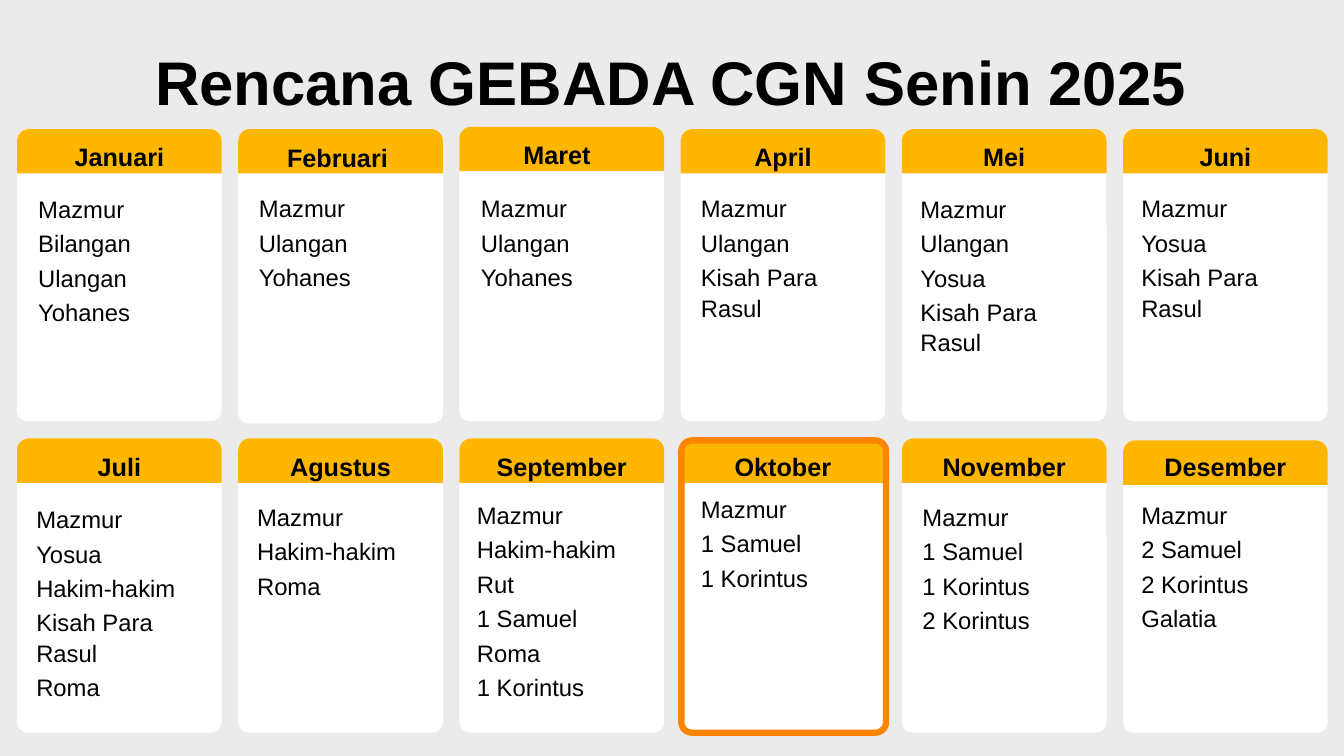
"""Build the 2025 monthly Bible reading plan slide."""
from dataclasses import dataclass

from pptx import Presentation
from pptx.dml.color import RGBColor
from pptx.enum.shapes import MSO_SHAPE
from pptx.enum.text import MSO_ANCHOR, PP_ALIGN
from pptx.shapes.autoshape import Shape
from pptx.slide import Slide
from pptx.util import Pt

ROUND = MSO_SHAPE.ROUNDED_RECTANGLE
ROUND_TOP = MSO_SHAPE.ROUND_2_SAME_RECTANGLE
TOP = MSO_ANCHOR.TOP
CENTER, LEFT = PP_ALIGN.CENTER, PP_ALIGN.LEFT

GRAY = RGBColor(0xEB, 0xEB, 0xEB)
WHITE = RGBColor(0xFF, 0xFF, 0xFF)
AMBER = RGBColor(0xFF, 0xB6, 0x00)
ORANGE = RGBColor(0xFB, 0x85, 0x00)
BLACK = RGBColor(0, 0, 0)

FONT = "Arial"
COLS = 6
GRID_LEFT, COL_PITCH = 12.2, 158
CARD_W, CARD_H, HEAD_H = 146.2, 208.8, 31.7
CARD_TOPS = (92.2, 314.6)
HEAD_TOPS = (92.2, 313.2)
LABEL_TOPS = (99.4, 321.1)
LINE_SPACING, LINE_H, GAP = 1.06, 20.7, 3


@dataclass(frozen=True)
class Month:
    """A month with its books and small position adjustments in points."""
    name: str
    books: tuple[str, ...]
    books_top: float = 137.5
    books_dx: float = 0
    card_dy: float = 0
    head_dy: float = 0
    label_dx: float = 0
    label_dy: float = 0


MONTHS = (
    Month("Januari", ("Mazmur", "Bilangan", "Ulangan", "Yohanes"), books_dx=0.7),
    Month("Februari", ("Mazmur", "Ulangan", "Yohanes"), books_dx=0.4,
          card_dy=1.4, label_dx=-2.2, label_dy=0.7),
    Month("Maret", ("Mazmur", "Ulangan", "Yohanes"), books_dx=0.9,
          head_dy=-1.6, label_dx=-3.4, label_dy=-1.4),
    Month("April", ("Mazmur", "Ulangan", "Kisah Para Rasul")),
    Month("Mei", ("Mazmur", "Ulangan", "Yosua", "Kisah Para Rasul"), books_dx=-1.2),
    Month("Juni", ("Mazmur", "Yosua", "Kisah Para Rasul"), books_dx=-1.4),
    Month("Juli", ("Mazmur", "Yosua", "Hakim-hakim", "Kisah Para Rasul", "Roma"),
          359.3, -0.7),
    Month("Agustus", ("Mazmur", "Hakim-hakim", "Roma"), 357.8, -1),
    Month("September", ("Mazmur", "Hakim-hakim", "Rut", "1 Samuel", "Roma",
                        "1 Korintus"), 356.4, -2),
    Month("Oktober", ("Mazmur", "1 Samuel", "1 Korintus"), 352.1),
    Month("November", ("Mazmur", "1 Samuel", "1 Korintus", "2 Korintus"), 357.8, 0.3),
    Month("Desember", ("Mazmur", "2 Samuel", "2 Korintus", "Galatia"), 356.4, -1.4,
          head_dy=1.4),
)
HIGHLIGHTED = 9


def cell(index: int) -> tuple[float, int]:
    """Return the left edge and the row of a month."""
    row, col = divmod(index, COLS)
    return GRID_LEFT + COL_PITCH * col, row


def add_panel(s: Slide, kind: MSO_SHAPE, x: float, y: float, h: float,
              radius: float) -> Shape:
    """Add a card-wide shape without shadow, fill or line."""
    sp = s.shapes.add_shape(kind, Pt(x), Pt(y), Pt(CARD_W), Pt(h))
    sp.adjustments[0] = radius
    sp.shadow.inherit = False
    sp.fill.background()
    sp.line.fill.background()
    return sp


def fill_panel(sp: Shape, color: RGBColor) -> None:
    """Fill a panel with one colour."""
    sp.fill.solid()
    sp.fill.fore_color.rgb = color


def write(sp: Shape, lines: tuple[str, ...], size: float, align: PP_ALIGN,
          bold: bool = False, indent: float = 0) -> None:
    """Write one paragraph per line in a shape."""
    tf = sp.text_frame
    tf.word_wrap = True
    tf.vertical_anchor = TOP
    tf.margin_left = Pt(indent)
    tf.margin_top = tf.margin_right = tf.margin_bottom = Pt(0)
    for i, line in enumerate(lines):
        p = tf.add_paragraph() if i else tf.paragraphs[0]
        p.alignment = align
        p.line_spacing = LINE_SPACING
        p.space_before = Pt(0)
        p.space_after = Pt(GAP)
        r = p.add_run()
        r.text = line
        r.font.name = FONT
        r.font.size = Pt(size)
        r.font.bold = bold
        r.font.color.rgb = BLACK


def add_month(s: Slide, index: int, month: Month) -> None:
    """Draw the card, header, name and books of a month."""
    x, row = cell(index)
    card = add_panel(s, ROUND, x, CARD_TOPS[row] + month.card_dy, CARD_H, 0.052)
    fill_panel(card, WHITE)
    head = add_panel(s, ROUND_TOP, x, HEAD_TOPS[row] + month.head_dy, HEAD_H, 0.267)
    fill_panel(head, AMBER)
    label = s.shapes.add_textbox(Pt(x + month.label_dx),
                                 Pt(LABEL_TOPS[row] + month.label_dy),
                                 Pt(CARD_W), Pt(21.6))
    write(label, (month.name,), 18, CENTER, bold=True)
    height = LINE_H * len(month.books) + GAP * (len(month.books) - 1)
    books = s.shapes.add_textbox(Pt(x + month.books_dx), Pt(month.books_top),
                                 Pt(145.4), Pt(height))
    write(books, month.books, 17, LEFT, indent=14.4)


def main() -> None:
    """Build and save the slide."""
    prs = Presentation()
    prs.slide_width, prs.slide_height = Pt(960), Pt(540)
    s = prs.slides.add_slide(prs.slide_layouts[5])
    s.background.fill.solid()
    s.background.fill.fore_color.rgb = GRAY

    title = s.shapes.title
    title.left, title.top = Pt(18), Pt(28.5)
    title.width, title.height = Pt(923), Pt(53.3)
    write(title, ("Rencana GEBADA CGN Senin 2025",), 44, CENTER, bold=True)

    for index, month in enumerate(MONTHS):
        add_month(s, index, month)

    x, row = cell(HIGHLIGHTED)
    frame = add_panel(s, ROUND, x + 0.5, CARD_TOPS[row], CARD_H, 0.052)
    frame.line.color.rgb = ORANGE
    frame.line.width = Pt(4.5)
    prs.save("out.pptx")


if __name__ == "__main__":
    main()
